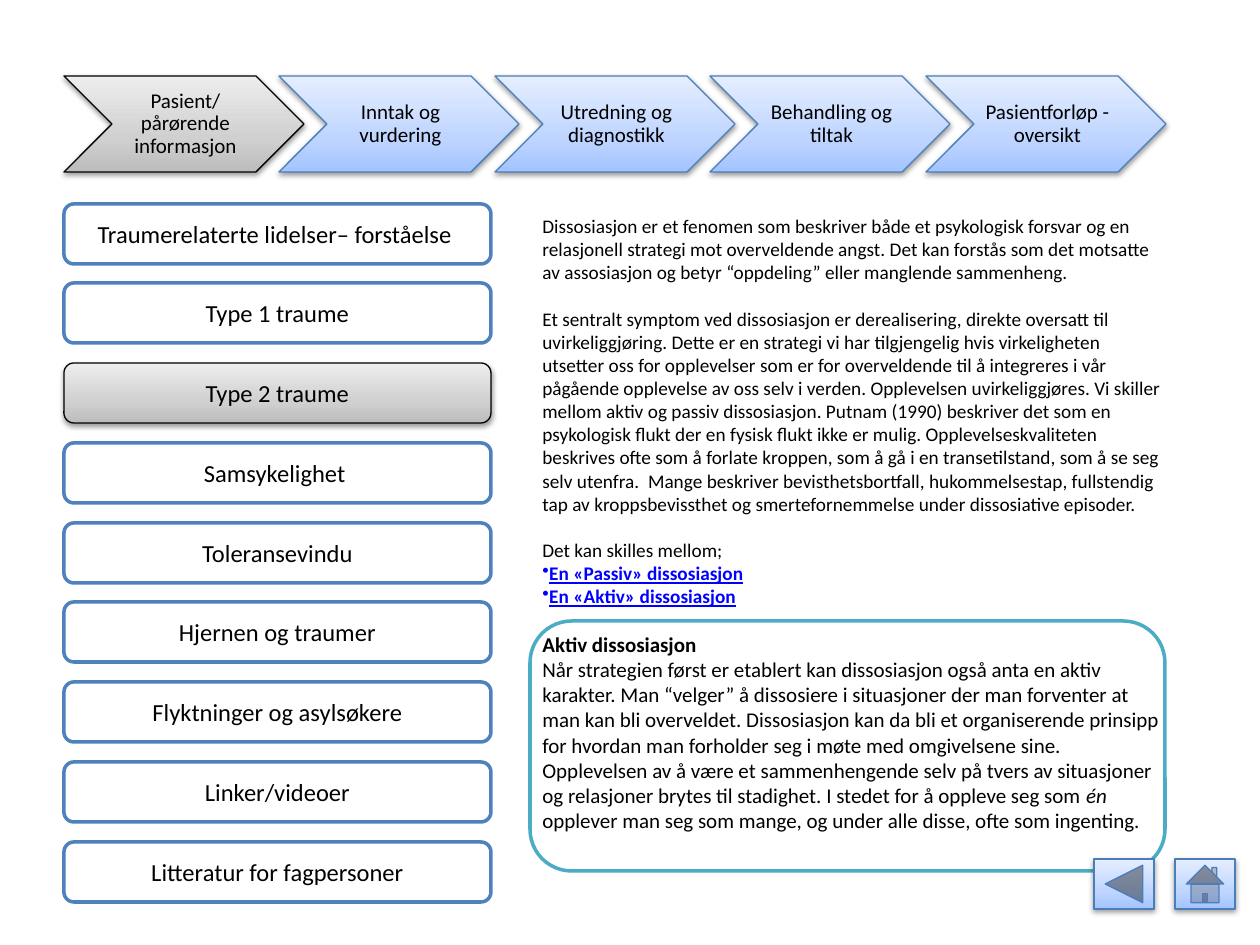
from pptx import Presentation
from pptx.dml.color import RGBColor
from pptx.enum.shapes import MSO_SHAPE as Shape
from pptx.enum.text import MSO_ANCHOR as Anchor, PP_ALIGN as Align
from pptx.oxml import parse_xml
from pptx.oxml.ns import nsdecls, qn
from pptx.util import Emu, Pt

SCALE = 914400 / 126
BLUE = {"stops": {0: "A3C4FF", 35: "BFD5FF", 100: "E5EEFF"}, "line": "4A7EBB"}
GREY = {"stops": {0: "BCBCBC", 35: "D0D0D0", 100: "EDEDED"}, "line": "000000"}


def px(value):
    return Emu(round(value * SCALE))


def color(value):
    return RGBColor.from_string(value)


def set_all(target, values):
    for name, value in values.items():
        setattr(target, name, value)


class SlideBuilder:
    font = "Calibri"
    ink = "000000"

    def __init__(self, slide):
        self.slide = slide

    def shape(self, kind, area, line, width):
        shape = self.slide.shapes.add_shape(kind, *map(px, area))
        shape.shadow.inherit = False
        shape.line.color.rgb = color(line)
        shape.line.width = Pt(width)
        return shape

    def outlined(self, area, line):
        shape = self.shape(Shape.ROUNDED_RECTANGLE, area, line, 2)
        shape.fill.solid()
        shape.fill.fore_color.rgb = color("FFFFFF")
        return shape

    def glossy(self, kind, area, theme):
        shape = self.shape(kind, area, theme["line"], 0.75)
        stops = "".join(
            f'<a:gs pos="{place * 1000}"><a:srgbClr val="{value}"/></a:gs>'
            for place, value in theme["stops"].items()
        )
        properties = shape._element.spPr
        properties.find(qn("a:prstGeom")).addnext(parse_xml(
            f'<a:gradFill {nsdecls("a")} rotWithShape="1"><a:gsLst>{stops}</a:gsLst>'
            '<a:lin ang="16200000" scaled="0"/></a:gradFill>'
        ))
        properties.find(qn("a:effectLst")).append(parse_xml(
            f'<a:outerShdw {nsdecls("a")} blurRad="40000" dist="20000" dir="5400000" '
            'rotWithShape="0"><a:srgbClr val="000000"><a:alpha val="38000"/></a:srgbClr>'
            '</a:outerShdw>'
        ))
        return shape

    def span(self, para, text, size, ink=None, **format_values):
        span = para.add_run()
        span.text = text
        set_all(span.font, {"name": self.font, "size": Pt(size), **format_values})
        span.font.color.rgb = color(ink or self.ink)

    def label(self, shape, text, size, **para_values):
        frame = shape.text_frame
        set_all(frame, {"word_wrap": True, "vertical_anchor": Anchor.MIDDLE})
        para = frame.paragraphs[0]
        set_all(para, {"alignment": Align.CENTER, **para_values})
        self.span(para, text, size)

    def step(self, area, text, theme):
        shape = self.glossy(Shape.CHEVRON, area, theme)
        set_all(shape.text_frame, {
            "margin_left": px(6), "margin_top": px(3),
            "margin_right": px(3), "margin_bottom": px(3),
        })
        self.label(shape, text, 12, line_spacing=0.9)

    def article(self, area, paragraphs):
        box = self.slide.shapes.add_textbox(*map(px, area))
        frame = box.text_frame
        frame.word_wrap = True
        for index, (gap, size, bullet, spans) in enumerate(paragraphs):
            para = frame.add_paragraph() if index else frame.paragraphs[0]
            if bullet:
                para._p.get_or_add_pPr().append(
                    parse_xml(f'<a:buChar {nsdecls("a")} char="•"/>')
                )
            para.space_before = Pt(gap)
            for text, format_values in spans:
                self.span(para, text, size, **format_values)


LINK = {"ink": "0000FF", "bold": True, "underline": True}
ARTICLE = [
    (0, 11, False, [(
        "Dissosiasjon er et fenomen som beskriver både et psykologisk forsvar og en "
        "relasjonell strategi mot overveldende angst. Det kan forstås som det motsatte "
        "av assosiasjon og betyr “oppdeling” eller manglende sammenheng.", {})]),
    (13.4, 11, False, [(
        "Et sentralt symptom ved dissosiasjon er derealisering, direkte oversatt til "
        "uvirkeliggjøring. Dette er en strategi vi har tilgjengelig hvis virkeligheten "
        "utsetter oss for opplevelser som er for overveldende til å integreres i vår "
        "pågående opplevelse av oss selv i verden. Opplevelsen uvirkeliggjøres. Vi skiller "
        "mellom aktiv og passiv dissosiasjon. Putnam (1990) beskriver det som en "
        "psykologisk flukt der en fysisk flukt ikke er mulig. Opplevelseskvaliteten "
        "beskrives ofte som å forlate kroppen, som å gå i en transetilstand, som å se seg "
        "selv utenfra.  Mange beskriver bevisthetsbortfall, hukommelsestap, fullstendig "
        "tap av kroppsbevissthet og smertefornemmelse under dissosiative episoder.", {})]),
    (13.4, 11, False, [("Det kan skilles mellom;", {})]),
    (0, 11, True, [("En «Passiv» dissosiasjon", LINK)]),
    (0, 11, True, [("En «Aktiv» dissosiasjon", LINK)]),
    (13.4, 12, False, [("Aktiv dissosiasjon", {"bold": True})]),
    (0, 12, False, [
        ("Når strategien først er etablert kan dissosiasjon også anta en aktiv karakter. "
         "Man “velger” å dissosiere i situasjoner der man forventer at man kan bli "
         "overveldet. Dissosiasjon kan da bli et organiserende prinsipp for hvordan man "
         "forholder seg i møte med omgivelsene sine. Opplevelsen av å være et "
         "sammenhengende selv på tvers av situasjoner og relasjoner brytes til stadighet. "
         "I stedet for å oppleve seg som ", {}),
        ("én", {"italic": True}),
        (" opplever man seg som mange, og under alle disse, ofte som ingenting.", {})]),
]
MENU = [
    "Traumerelaterte lidelser– forståelse ", "Type 1 traume", "Type 2 traume",
    "Samsykelighet ", "Toleransevindu", "Hjernen og traumer",
    "Flyktninger og asylsøkere", "Linker/videoer", "Litteratur for fagpersoner",
]
CURRENT_TOPIC = "Type 2 traume"
STEPS = [
    "Pasient/ pårørende informasjon", "Inntak og vurdering",
    "Utredning og diagnostikk", "Behandling og tiltak", "Pasientforløp - oversikt",
]


def main():
    deck = Presentation()
    set_all(deck, {"slide_width": px(1260), "slide_height": px(945)})
    page = SlideBuilder(deck.slides.add_slide(deck.slide_layouts[6]))

    page.glossy(Shape.ACTION_BUTTON_HOME, (1175, 859, 60, 50), BLUE)
    page.outlined((530, 621, 635, 250), "4BACC6")
    page.article((530, 208, 645, 683), ARTICLE)

    for index, topic in enumerate(MENU):
        area = (64, 204 + index * 638 // 8, 427, 60)
        if topic == CURRENT_TOPIC:
            button = page.glossy(Shape.ROUNDED_RECTANGLE, area, GREY)
        else:
            button = page.outlined(area, "4F81BD")
        page.label(button, topic, 14)

    page.glossy(Shape.ACTION_BUTTON_BACK_OR_PREVIOUS, (1094, 859, 60, 50), BLUE)

    for index, step in enumerate(STEPS):
        area = (64 + index * 862 // 4, 76, 240, 96)
        page.step(area, step, BLUE if index else GREY)

    deck.save("out.pptx")


if __name__ == "__main__":
    main()
